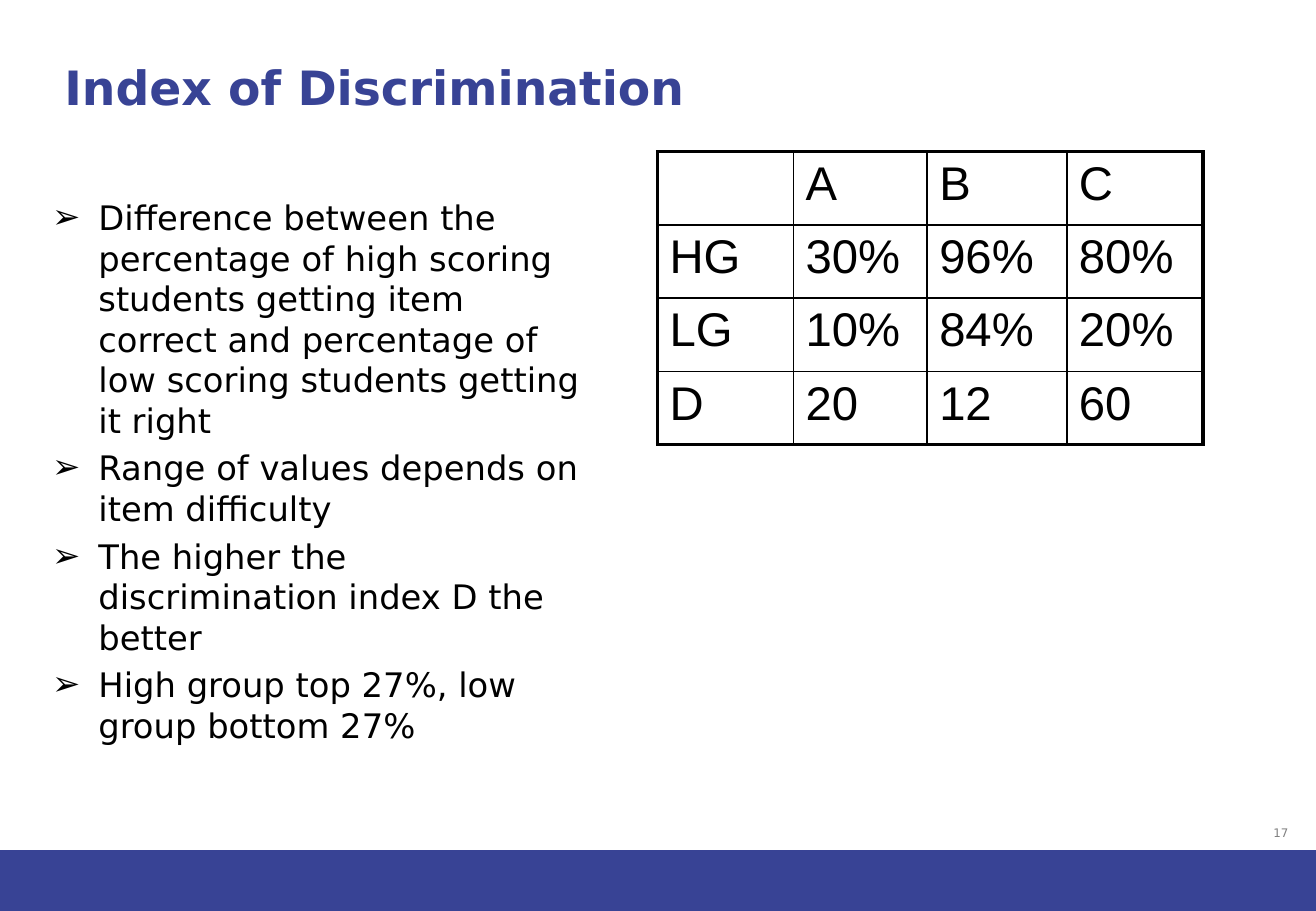
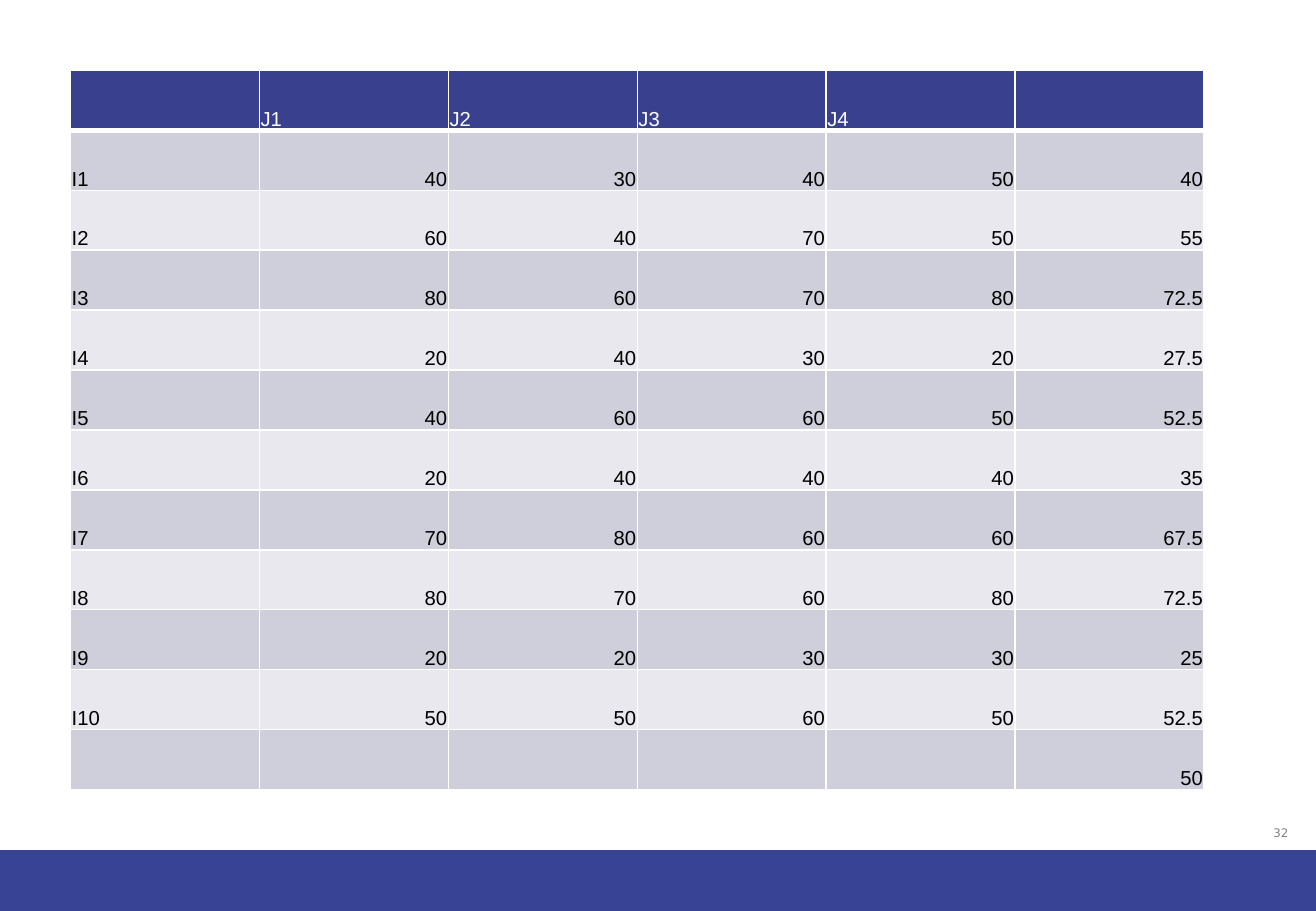
from dataclasses import dataclass
from typing import Optional

from lxml.etree import SubElement
from pptx import Presentation
from pptx.dml.color import RGBColor
from pptx.enum.shapes import MSO_SHAPE
from pptx.enum.text import MSO_ANCHOR as Anchor, MSO_AUTO_SIZE as AutoSize, PP_ALIGN as Align
from pptx.oxml.ns import qn
from pptx.slide import Slide
from pptx.util import Inches, Pt


@dataclass(frozen=True)
class Theme:
    band: str = "384395"
    header: str = "39408E"
    stripes: tuple[str, str] = ("CECFDB", "E8E8EE")
    black: str = "000000"
    white: str = "FFFFFF"
    grey: str = "808080"
    sans: str = "DejaVu Sans"
    table_font: str = "Arial"
    title_size: float = 28
    body_size: float = 20
    body_gap: float = 4.3
    score_size: float = 12
    number_size: float = 7


THEME = Theme()
SLIDE_WIDTH, SLIDE_HEIGHT = 10.83, 7.5


@dataclass(frozen=True)
class Box:
    left: float
    top: float
    width: float
    height: float

    def lengths(self) -> tuple[Inches, ...]:
        return tuple(Inches(v) for v in (self.left, self.top, self.width, self.height))


@dataclass(frozen=True)
class TextStyle:
    size: float
    color: str
    font: str
    bold: bool = False


@dataclass(frozen=True)
class Edges:
    """Cell border widths in points."""
    left: float = 1
    right: float = 1
    top: float = 1
    bottom: float = 1


@dataclass(frozen=True)
class CellLook:
    style: TextStyle
    edges: Edges
    edge_color: str
    fill: Optional[str] = None
    align: Align = Align.LEFT
    anchor: Anchor = Anchor.TOP
    margins: tuple[float, float, float, float] = (0.1, 0.1, 0.05, 0.05)


TITLE_STYLE = TextStyle(THEME.title_size, THEME.band, THEME.sans, bold=True)
BODY_STYLE = TextStyle(THEME.body_size, THEME.black, THEME.sans)
NUMBER_STYLE = TextStyle(THEME.number_size, THEME.grey, THEME.sans)
INDEX_STYLE = TextStyle(THEME.title_size, THEME.black, THEME.table_font)

# Content
DISCRIMINATION_POINTS = (
    "Difference between the percentage of high scoring students getting item "
    "correct and percentage of low scoring students getting it right",
    "Range of values depends on item difficulty",
    "The higher the discrimination index D the better",
    "High group top 27%, low group bottom 27%",
)
DISCRIMINATION_INDEX = (
    ("", "A", "B", "C"),
    ("HG", "30%", "96%", "80%"),
    ("LG", "10%", "84%", "20%"),
    ("D", "20", "12", "60"),
)
JUDGES = ("J1", "J2", "J3", "J4")
ITEM_RATINGS = (
    (40, 30, 40, 50),
    (60, 40, 70, 50),
    (80, 60, 70, 80),
    (20, 40, 30, 20),
    (40, 60, 60, 50),
    (20, 40, 40, 40),
    (70, 80, 60, 60),
    (80, 70, 60, 80),
    (20, 20, 30, 30),
    (50, 50, 60, 50),
)


# Text helpers
def add_run(paragraph, text: str, style: TextStyle) -> None:
    run = paragraph.add_run()
    run.text = text
    run.font.size = Pt(style.size)
    run.font.name = style.font
    run.font.bold = style.bold
    run.font.color.rgb = RGBColor.from_string(style.color)


def place_text(shape, box: Box):
    shape.left, shape.top, shape.width, shape.height = box.lengths()
    frame = shape.text_frame
    frame.word_wrap = True
    frame.auto_size = AutoSize.NONE
    frame.vertical_anchor = Anchor.TOP
    return frame


def add_bullet(paragraph, indent: float) -> None:
    props = paragraph._p.get_or_add_pPr()
    props.set("marL", str(Inches(indent)))
    props.set("indent", str(-Inches(indent)))
    SubElement(props, qn("a:buFont"), typeface=THEME.sans)
    SubElement(props, qn("a:buChar"), char="➢")


# Shared slide parts
def add_master_band(prs, slide: Slide) -> None:
    box = Box(0, 7, SLIDE_WIDTH, 0.5)
    band = slide.shapes.add_shape(MSO_SHAPE.RECTANGLE, *box.lengths())
    band.shadow.inherit = False
    band.fill.solid()
    band.fill.fore_color.rgb = RGBColor.from_string(THEME.band)
    band.line.fill.background()
    # Every slide inherits the band once it sits at the back of the master
    prs.slide_master.shapes.element.insert(2, band.element)


def add_slide_number(slide: Slide, number: int) -> None:
    box = Box(10.25, 6.75, 0.58, 0.25)
    frame = place_text(slide.shapes.add_textbox(*box.lengths()), box)
    frame.paragraphs[0].alignment = Align.CENTER
    add_run(frame.paragraphs[0], str(number), NUMBER_STYLE)


def set_title(slide: Slide, text: str) -> None:
    frame = place_text(slide.shapes.title, Box(0.43, 0.43, 9.9, 0.74))
    frame.paragraphs[0].alignment = Align.LEFT
    add_run(frame.paragraphs[0], text, TITLE_STYLE)


def set_bullets(slide: Slide, points: tuple[str, ...], box: Box) -> None:
    frame = place_text(slide.placeholders[1], box)
    for i, point in enumerate(points):
        paragraph = frame.add_paragraph() if i else frame.paragraphs[0]
        add_bullet(paragraph, 0.38)
        paragraph.space_before = Pt(THEME.body_gap if i else 0)
        add_run(paragraph, point, BODY_STYLE)


# Tables
def add_plain_table(slide: Slide, box: Box, widths: tuple[float, ...], row_count: int):
    table = slide.shapes.add_table(row_count, len(widths), *box.lengths()).table
    table.first_row = table.horz_banding = False
    for column, width in zip(table.columns, widths):
        column.width = Inches(width)
    for row in table.rows:
        row.height = Inches(box.height / row_count)
    return table


def fill_cell(cell, text: str, look: CellLook) -> None:
    cell.margin_left, cell.margin_right, cell.margin_top, cell.margin_bottom = (
        Inches(m) for m in look.margins)
    cell.vertical_anchor = look.anchor
    props = cell._tc.get_or_add_tcPr()
    edges = look.edges
    for tag, width in (("lnL", edges.left), ("lnR", edges.right),
                       ("lnT", edges.top), ("lnB", edges.bottom)):
        line = SubElement(props, qn(f"a:{tag}"), w=str(Pt(width)))
        SubElement(SubElement(line, qn("a:solidFill")), qn("a:srgbClr"), val=look.edge_color)
    if look.fill:
        cell.fill.solid()
        cell.fill.fore_color.rgb = RGBColor.from_string(look.fill)
    else:
        cell.fill.background()
    if text:
        paragraph = cell.text_frame.paragraphs[0]
        paragraph.alignment = look.align
        add_run(paragraph, text, look.style)


def add_index_table(slide: Slide) -> None:
    rows, outer = DISCRIMINATION_INDEX, 2.25
    last_row, last_col = len(rows) - 1, len(rows[0]) - 1
    table = add_plain_table(slide, Box(5.41, 1.25, 4.5, 2.41), (1.12, 1.1, 1.15, 1.12), len(rows))
    for r, row in enumerate(rows):
        for c, text in enumerate(row):
            edges = Edges(left=1 if c else outer, right=outer if c == last_col else 1,
                          top=1 if r else outer, bottom=outer if r == last_row else 1)
            fill_cell(table.cell(r, c), text, CellLook(INDEX_STYLE, edges, THEME.black))


def rating_rows() -> list[tuple[str, ...]]:
    means = [sum(ratings) / len(ratings) for ratings in ITEM_RATINGS]
    rows = [("", *JUDGES, "")]
    for i, (ratings, mean) in enumerate(zip(ITEM_RATINGS, means), start=1):
        rows.append((f"I{i}", *(str(v) for v in ratings), f"{mean:g}"))
    rows.append(("",) * (len(JUDGES) + 1) + (f"{sum(means) / len(means):g}",))
    return rows


def add_ratings_table(slide: Slide) -> None:
    rows, box = rating_rows(), Box(0.58, 0.58, 9.33, 5.92)
    columns = len(rows[0])
    table = add_plain_table(slide, box, (box.width / columns,) * columns, len(rows))
    for r, row in enumerate(rows):
        header = r == 0
        look_fill = THEME.header if header else THEME.stripes[(r - 1) % 2]
        style = TextStyle(THEME.score_size, THEME.white if header else THEME.black,
                          THEME.table_font)
        edges = Edges(top=3 if r == 1 else 1, bottom=3 if header else 1)
        for c, text in enumerate(row):
            align = Align.LEFT if header or c == 0 else Align.RIGHT
            fill_cell(table.cell(r, c), text,
                      CellLook(style, edges, THEME.white, look_fill, align,
                               Anchor.BOTTOM, (0.01, 0.01, 0.01, 0)))


def main() -> None:
    prs = Presentation()
    prs.slide_width, prs.slide_height = Inches(SLIDE_WIDTH), Inches(SLIDE_HEIGHT)
    content_layout = prs.slide_layouts.get_by_name("Title and Content")
    blank_layout = prs.slide_layouts.get_by_name("Blank")

    # Index of discrimination
    discrimination = prs.slides.add_slide(content_layout)
    add_master_band(prs, discrimination)
    add_slide_number(discrimination, 17)
    set_title(discrimination, "Index of Discrimination")
    add_index_table(discrimination)
    set_bullets(discrimination, DISCRIMINATION_POINTS, Box(0.33, 1.57, 4.56, 5.01))

    # Judges' ratings per item
    ratings = prs.slides.add_slide(blank_layout)
    add_slide_number(ratings, 32)
    add_ratings_table(ratings)

    prs.save("out.pptx")


if __name__ == "__main__":
    main()
